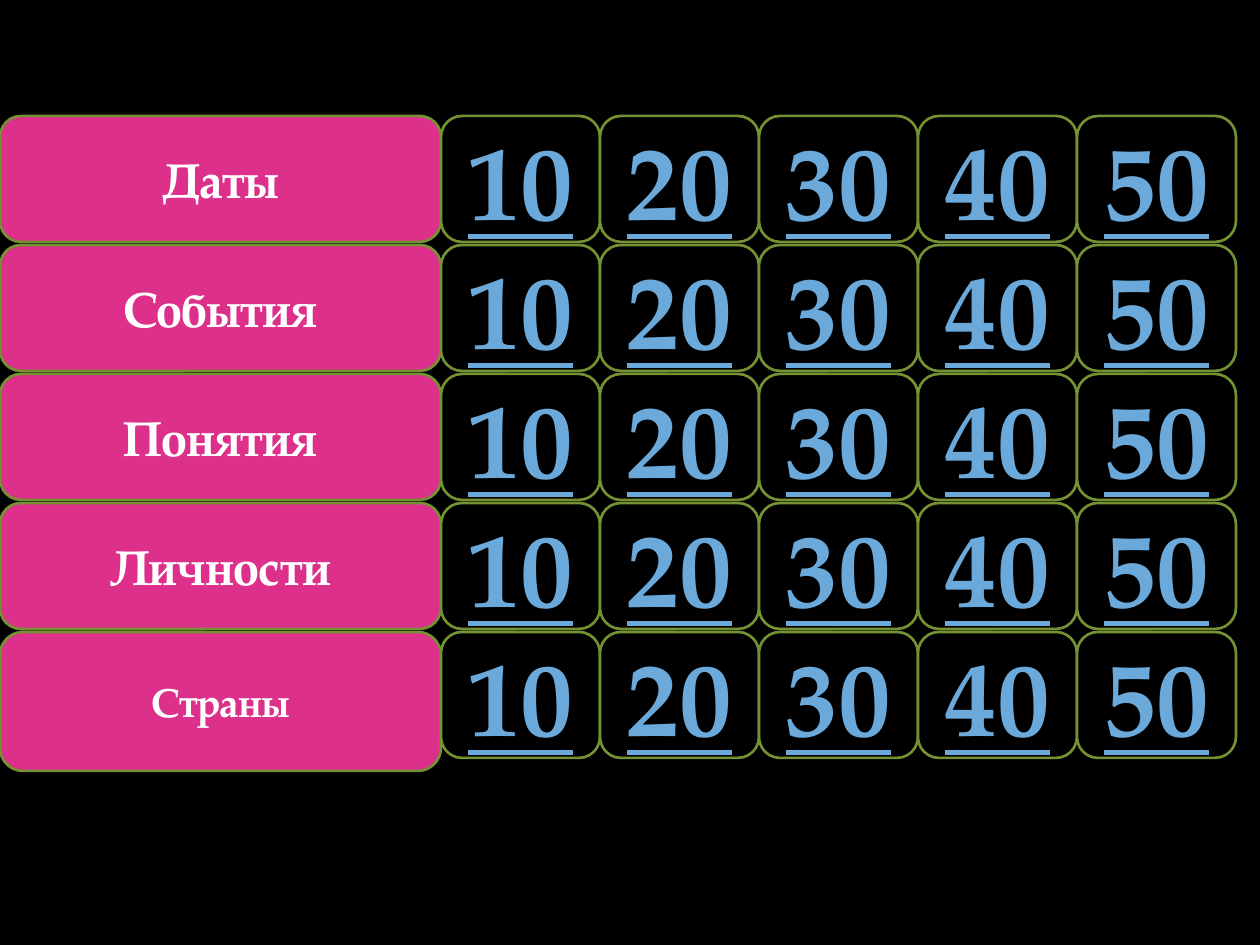
from pptx import Presentation
from pptx.dml.color import RGBColor as RGB
from pptx.enum.shapes import MSO_SHAPE as SHAPE
from pptx.enum.text import MSO_ANCHOR as ANCHOR, PP_ALIGN as ALIGN
from pptx.util import Pt

PX = 914400 // 126
COLORS = {"back": "000000", "topic": "DC308A", "edge": "759232",
          "white": "FFFFFF", "score": "6BA9DA"}
BASE = {"name": "TeX Gyre Pagella", "bold": True}
TOPIC = BASE | {"size": Pt(28)}
SMALL = BASE | {"size": Pt(23)}
SCORE = BASE | {"size": Pt(60), "underline": True}

# Topic, its height and its font
ROWS = [("Даты", 126, TOPIC), ("События", 126, TOPIC), ("Понятия", 126, TOPIC),
        ("Личности", 126, TOPIC), ("Страны", 139, SMALL)]
SCORES = range(10, 60, 10)


def color(key):
    return RGB.from_string(COLORS[key])


def add_cell(slide, box, text, fill, ink, font):
    cell = slide.shapes.add_shape(SHAPE.ROUNDED_RECTANGLE, *(n * PX for n in box))
    cell.shadow.inherit = False
    cell.fill.solid()
    cell.fill.fore_color.rgb = color(fill)
    cell.line.color.rgb = color("edge")
    cell.line.width = Pt(1.5)
    frame = cell.text_frame
    frame.word_wrap = True
    frame.vertical_anchor = ANCHOR.MIDDLE
    para = frame.paragraphs[0]
    para.alignment = ALIGN.CENTER
    run = para.add_run()
    run.text = text
    for key, value in font.items():
        setattr(run.font, key, value)
    run.font.color.rgb = color(ink)


def add_board(slide, left, top, width, height):
    """Place one row per topic: a wide label, then its scores."""
    label, gap = 441, 3
    step = (width - label) // len(SCORES)
    tall = (height + gap) // len(ROWS) - gap
    for i, (topic, high, font) in enumerate(ROWS):
        y = top + i * (tall + gap)
        add_cell(slide, (left, y, label, high), topic, "topic", "white", font)
        for j, score in enumerate(SCORES):
            box = (left + label + j * step, y, step, tall)
            add_cell(slide, box, str(score), "back", "score", SCORE)


def main():
    deck = Presentation()
    deck.slide_width, deck.slide_height = 1260 * PX, 945 * PX
    slide = deck.slides.add_slide(deck.slide_layouts[6])
    back = slide.background.fill
    back.solid()
    back.fore_color.rgb = color("back")
    add_board(slide, 0, 116, 1236, 642)
    deck.save("out.pptx")


if __name__ == "__main__":
    main()
